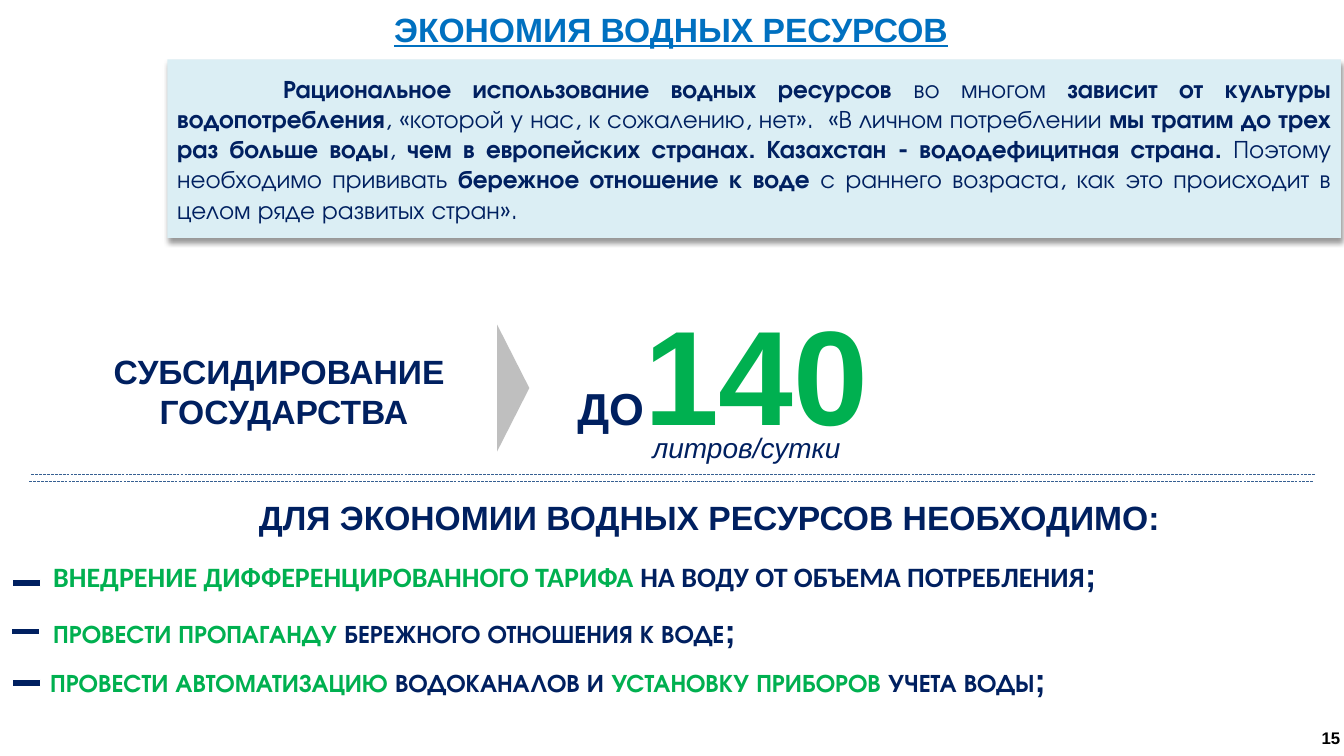
from lxml import etree
from pptx import Presentation
from pptx.dml.color import RGBColor
from pptx.enum.dml import MSO_LINE
from pptx.enum.shapes import MSO_CONNECTOR, MSO_SHAPE
from pptx.enum.text import MSO_ANCHOR, PP_ALIGN
from pptx.oxml import parse_xml
from pptx.oxml.ns import nsdecls, qn
from pptx.util import Pt

SCALE = 9144  # EMU per px, 100 px to the inch
NAVY = RGBColor(0x00, 0x20, 0x60)
GREEN = RGBColor(0x00, 0xB0, 0x50)
BLUE = RGBColor(0x00, 0x70, 0xC0)
STEEL = RGBColor(0x37, 0x60, 0x92)
PALE = RGBColor(0xDB, 0xEE, 0xF4)
GREY = RGBColor(0xBF, 0xBF, 0xBF)
WHITE = RGBColor(0xFF, 0xFF, 0xFF)
BLACK = RGBColor(0x00, 0x00, 0x00)

RECT = MSO_SHAPE.RECTANGLE
TRIANGLE = MSO_SHAPE.ISOSCELES_TRIANGLE
STRAIGHT = MSO_CONNECTOR.STRAIGHT
LONG_DASH = MSO_LINE.LONG_DASH
LEFT, CENTER, JUSTIFY = PP_ALIGN.LEFT, PP_ALIGN.CENTER, PP_ALIGN.JUSTIFY
TOP, MIDDLE = MSO_ANCHOR.TOP, MSO_ANCHOR.MIDDLE

ARIAL, CALIBRI, GYRE = "Arial", "Calibri", "TeX Gyre Adventor"
WIDE, SLIM = (13, 7), (10, 5)


def px(*sizes):
    return [size * SCALE for size in sizes]


def style(font, look):
    """Apply a dict of font attributes; color takes an RGBColor."""
    for key, value in look.items():
        if key == "color":
            font.color.rgb = value
        elif key == "size":
            font.size = Pt(value)
        elif key == "name":
            font.name = value
        elif key == "bold":
            font.bold = value
        elif key == "italic":
            font.italic = value
        elif key == "underline":
            font.underline = value


class Page:
    def __init__(self, width, height):
        self.deck = Presentation()
        self.deck.slide_width, self.deck.slide_height = px(width, height)
        self.slide = self.deck.slides.add_slide(self.deck.slide_layouts[6])
        self.shapes = self.slide.shapes
        self.look = {"name": ARIAL, "size": 24, "color": NAVY, "bold": True}

    def label(self, shape, lines, align=LEFT, inset=WIDE, anchor=TOP,
              wrap=True, **look):
        """Fill a shape with lines, each a list of (text, font changes)."""
        frame = shape.text_frame
        frame.word_wrap = wrap
        frame.vertical_anchor = anchor
        frame.margin_left, frame.margin_top = px(*inset)
        frame.margin_right, frame.margin_bottom = px(*inset)
        for i, line in enumerate(lines):
            para = frame.add_paragraph() if i else frame.paragraphs[0]
            para.alignment = align
            style(para.font, {**self.look, **look})
            for words, change in line:
                run = para.add_run()
                run.text = words
                style(run.font, change)

    def text(self, box, lines, **kind):
        self.label(self.shapes.add_textbox(*px(*box)), lines, **kind)

    def block(self, box, fill, form=RECT, line=None):
        shape = self.shapes.add_shape(form, *px(*box))
        shape.shadow.inherit = False
        shape.fill.solid()
        shape.fill.fore_color.rgb = fill
        if line is None:
            shape.line.fill.background()
        else:
            shape.line.color.rgb = line
            shape.line.width = Pt(1)
        return shape

    def shade(self, shape):
        """Give a shape a soft shadow below."""
        effects = shape._element.spPr.find(qn("a:effectLst"))
        effects.append(parse_xml(
            f'<a:outerShdw {nsdecls("a")} blurRad="50800" dist="38100" '
            'dir="5400000" algn="t" rotWithShape="0"><a:srgbClr val="000000">'
            '<a:alpha val="40000"/></a:srgbClr></a:outerShdw>'))

    def rule(self, left, right, y):
        line = self.shapes.add_connector(STRAIGHT, *px(left, y, right, y))
        line.line.color.rgb = STEEL
        line.line.width = Pt(0.25)
        line.line.dash_style = LONG_DASH
        etree.SubElement(line._element.spPr, qn("a:effectLst"))

    def task(self, left, top, dash, runs, **look):
        """Add one line of the list with its dash at (x, y)."""
        end = (";", {"size": 24, "name": ARIAL, "color": NAVY})
        body = [(words, {"color": color}) for words, color in runs]
        self.text((left, top, 1163, 50), [body + [end]], inset=SLIM, **look)
        self.block((*dash, 28, 7), NAVY, line=WHITE)


def main():
    page = Page(1333, 750)

    title = page.block((-1, 0, 1333, 58), WHITE)
    page.label(title, [[("ЭКОНОМИЯ ВОДНЫХ РЕСУРСОВ", {})]], align=CENTER,
               anchor=MIDDLE, color=BLUE, underline=True)

    page.text((535, 282, 364, 175),
              [[("ДО", {"size": 32}), ("140", {"size": 96, "color": GREEN})]],
              align=CENTER)
    page.text((589, 420, 303, 47), [[("литров/сутки", {})]], align=CENTER,
              size=20, bold=False, italic=True)
    page.text((35, 341, 493, 91),
              [[("СУБСИДИРОВАНИЕ ", {})], [("ГОСУДАРСТВА", {})]], align=CENTER)
    page.text((1301, 717, 39, 30), [[("15", {})]], inset=SLIM, wrap=False,
              size=12, color=BLACK)
    page.block((446, 369, 126, 32), GREY, TRIANGLE).rotation = 90

    quote = page.block((166, 59, 1164, 177), PALE)
    page.shade(quote)
    parts = [
        "Рациональное использование водных ресурсов ",
        "во многом ",
        "зависит от культуры водопотребления",
        ", «которой у нас, к сожалению, нет».  «В личном потреблении ",
        "мы тратим до трех раз больше воды",
        ", ",
        "чем в европейских странах. Казахстан - вододефицитная страна. ",
        "Поэтому необходимо прививать ",
        "бережное отношение к воде ",
        "с раннего возраста, как это происходит в целом ряде развитых стран».",
    ]
    runs = [(part, {"bold": i % 2 == 0}) for i, part in enumerate(parts)]
    page.label(quote, [runs], align=JUSTIFY, anchor=MIDDLE, inset=SLIM,
               name=GYRE, size=18)
    props = quote.text_frame.paragraphs[0]._p.get_or_add_pPr()
    props.set("indent", str(105 * SCALE))

    page.text((140, 486, 1127, 50),
              [[("ДЛЯ ЭКОНОМИИ ВОДНЫХ РЕСУРСОВ НЕОБХОДИМО:", {})]],
              align=CENTER)
    page.rule(31, 1305, 470)
    page.rule(29, 1303, 477)

    page.task(43, 545, (12, 575),
              [("ВНЕДРЕНИЕ ДИФФЕРЕНЦИРОВАННОГО ТАРИФА ", GREEN),
               ("НА ВОДУ ОТ ОБЪЕМА ПОТРЕБЛЕНИЯ", NAVY)],
              name=CALIBRI, size=20)
    page.task(43, 600, (11, 623),
              [("ПРОВЕСТИ ПРОПАГАНДУ ", GREEN),
               ("БЕРЕЖНОГО ОТНОШЕНИЯ К ВОДЕ", NAVY)],
              name=GYRE, size=18)
    page.task(40, 649, (12, 674),
              [("ПРОВЕСТИ АВТОМАТИЗАЦИЮ ", GREEN), ("ВОДОКАНАЛОВ И ", NAVY),
               ("УСТАНОВКУ ПРИБОРОВ ", GREEN), ("УЧЕТА ВОДЫ", NAVY)],
              name=GYRE, size=18)

    page.deck.save("out.pptx")


if __name__ == "__main__":
    main()
